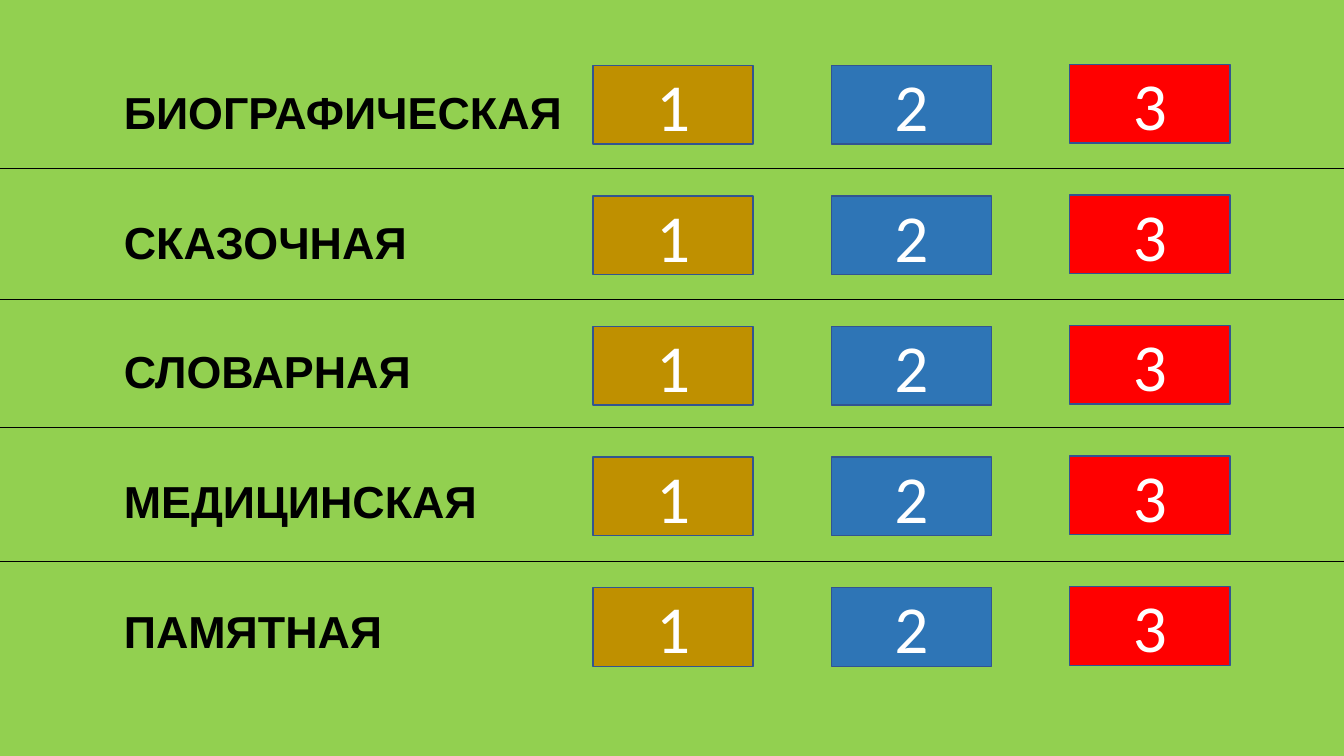
import dataclasses

import lxml.etree
import pptx
import pptx.dml.color
import pptx.enum.shapes
import pptx.enum.text
import pptx.oxml.ns
import pptx.util

Inches = pptx.util.Inches


@dataclasses.dataclass(frozen=True)
class Theme:
    """Colours, fonts and sizes of the game board."""
    background: str = "92D050"
    ink: str = "000000"
    number_ink: str = "FFFFFF"
    card_border: str = "325491"
    card_fills: tuple = ("BF9000", "2E75B6", "FF0000")
    label_font: str = "Arial"
    number_font: str = "Calibri"
    label_size: int = 32
    number_size: int = 48
    border_width: float = 1
    divider_width: float = 0.5


THEME = Theme()
SLIDE_WIDTH, SLIDE_HEIGHT = 13.33, 7.5
CATEGORIES = ("БИОГРАФИЧЕСКАЯ", "СКАЗОЧНАЯ", "СЛОВАРНАЯ", "МЕДИЦИНСКАЯ", "ПАМЯТНАЯ")
DIVIDER_TOPS = (1.67, 2.97, 4.24, 5.57)
LABEL_HEIGHT = 0.64
CARD_WIDTH, CARD_HEIGHT = 1.59, 0.78
LAST_CARD_LIFT = 0.01


def rgb(value):
    """Turn a hex string into a colour."""
    return pptx.dml.color.RGBColor.from_string(value)


def spread(start, length, size, count):
    """Return evenly spaced starts for items of one size within a length."""
    step = (length - size) / (count - 1)
    return [start + step * index for index in range(count)]


def write(shape, text, *, font, size, color, bold=False, align=None, anchor=None):
    """Put one formatted paragraph into a shape."""
    frame = shape.text_frame
    frame.word_wrap = True
    frame.vertical_anchor = anchor
    para = frame.paragraphs[0]
    para.alignment = align
    span = para.add_run()
    span.text = text
    span.font.name = font
    span.font.size = pptx.util.Pt(size)
    span.font.bold = bold
    span.font.color.rgb = rgb(color)


def add_labels(page, left, top, width, height):
    """Place the category names in a column."""
    for name, label_top in zip(CATEGORIES, spread(top, height, LABEL_HEIGHT, len(CATEGORIES))):
        box = page.shapes.add_textbox(
            Inches(left), Inches(label_top), Inches(width), Inches(LABEL_HEIGHT))
        write(box, name, font=THEME.label_font, size=THEME.label_size,
              color=THEME.ink, bold=True)
        box.text_frame.auto_size = pptx.enum.text.MSO_AUTO_SIZE.SHAPE_TO_FIT_TEXT


def add_card(page, left, top, number, fill):
    """Draw one numbered card."""
    card = page.shapes.add_shape(
        pptx.enum.shapes.MSO_SHAPE.RECTANGLE,
        Inches(left), Inches(top), Inches(CARD_WIDTH), Inches(CARD_HEIGHT))
    card.shadow.inherit = False
    card.fill.solid()
    card.fill.fore_color.rgb = rgb(fill)
    card.line.color.rgb = rgb(THEME.card_border)
    card.line.width = pptx.util.Pt(THEME.border_width)
    write(card, str(number), font=THEME.number_font, size=THEME.number_size,
          color=THEME.number_ink, align=pptx.enum.text.PP_ALIGN.CENTER,
          anchor=pptx.enum.text.MSO_ANCHOR.MIDDLE)


def add_cards(page, left, top, width, height):
    """Place a grid of cards, one row for each category."""
    fills = THEME.card_fills
    columns = spread(left, width, CARD_WIDTH, len(fills))
    for row_top in spread(top, height, CARD_HEIGHT, len(CATEGORIES)):
        for number, (card_left, fill) in enumerate(zip(columns, fills), 1):
            lift = LAST_CARD_LIFT if number == len(fills) else 0
            add_card(page, card_left, row_top - lift, number, fill)


def add_dividers(page, left, width):
    """Draw the lines between the rows."""
    for top in DIVIDER_TOPS:
        divider = page.shapes.add_connector(
            pptx.enum.shapes.MSO_CONNECTOR.STRAIGHT,
            Inches(left), Inches(top), Inches(left + width), Inches(top))
        divider.line.color.rgb = rgb(THEME.ink)
        divider.line.width = pptx.util.Pt(THEME.divider_width)
        lxml.etree.SubElement(divider._element.spPr, pptx.oxml.ns.qn("a:effectLst"))


def build_board(deck):
    """Add the game board slide."""
    page = deck.slides.add_slide(deck.slide_layouts[6])
    page.background.fill.solid()
    page.background.fill.fore_color.rgb = rgb(THEME.background)
    add_labels(page, 1.13, 0.79, 4.59, 5.79)
    add_cards(page, 5.88, 0.65, 6.32, 5.96)
    add_dividers(page, 0, SLIDE_WIDTH)


def main():
    """Build and save the deck."""
    deck = pptx.Presentation()
    deck.slide_width = Inches(SLIDE_WIDTH)
    deck.slide_height = Inches(SLIDE_HEIGHT)
    build_board(deck)
    deck.save("out.pptx")


if __name__ == "__main__":
    main()
